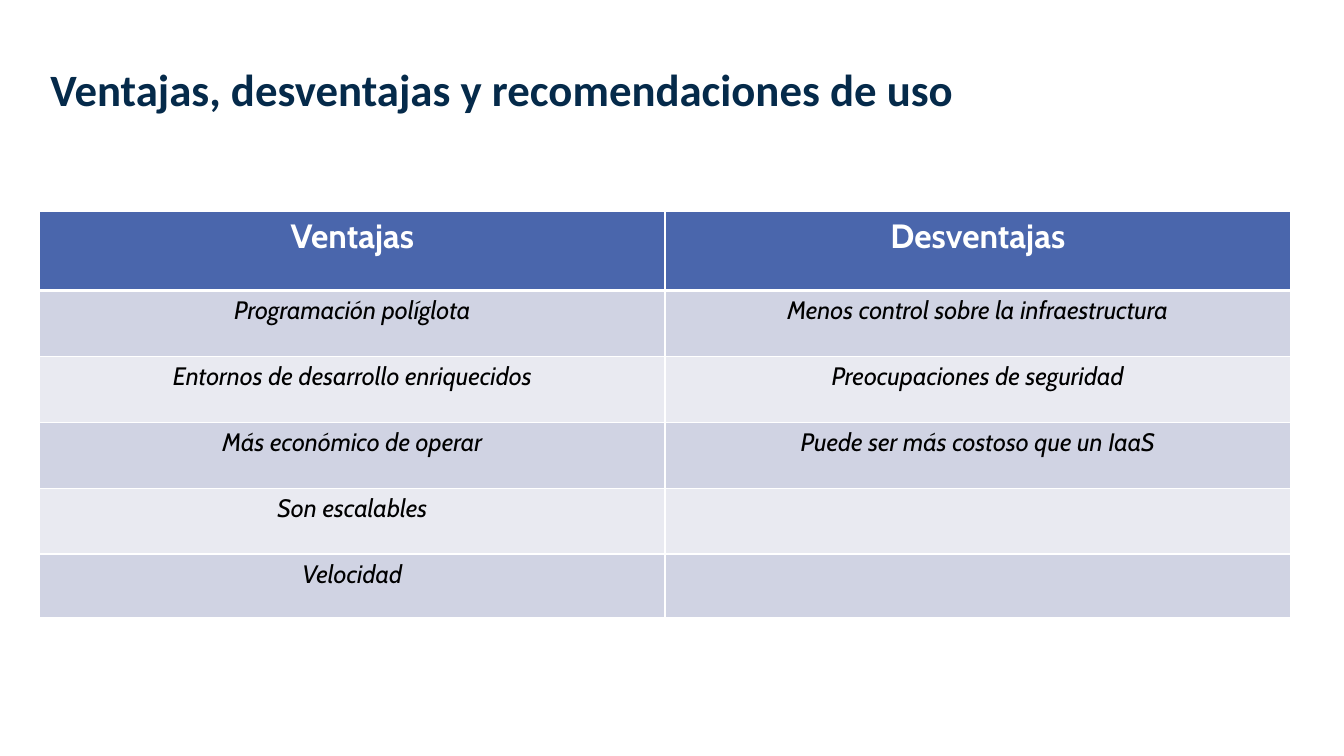
from dataclasses import dataclass

from lxml import etree
from pptx import Presentation
from pptx import util as u
from pptx.dml import color
from pptx.enum import text
from pptx.oxml import ns


@dataclass(frozen=True)
class Theme:
    title_font: str = "Calibri"
    body_font: str = "Cabin"
    title_size: int = 32
    header_size: int = 24
    body_size: int = 18
    navy: str = "052A4A"
    header_fill: str = "4A66AC"
    bands: tuple = ("D0D3E3", "E9EAF1")
    white: str = "FFFFFF"
    black: str = "000000"
    thin: int = 1
    thick: int = 3


THEME = Theme()
TITLE = "Ventajas, desventajas y recomendaciones de uso"
ROWS = [
    ("Ventajas", "Desventajas"),
    ("Programación políglota", "Menos control sobre la infraestructura"),
    ("Entornos de desarrollo enriquecidos", "Preocupaciones de seguridad"),
    ("Más económico de operar", "Puede ser más costoso que un IaaS"),
    ("Son escalables", ""),
    ("Velocidad", ""),
]
ROW_HEIGHTS = [2.0, 1.66, 1.66, 1.66, 1.66, 1.6]


def add_run(p, content, font, size, rgb, bold=False, italic=False):
    r = p.add_run()
    r.text = content
    r.font.name = font
    r.font.size = u.Pt(size)
    r.font.bold = bold
    r.font.italic = italic
    r.font.color.rgb = color.RGBColor.from_string(rgb)


def set_border(cell, side, width):
    tc_pr = cell._tc.get_or_add_tcPr()
    ln = etree.SubElement(tc_pr, ns.qn(f"a:ln{side}"), w=str(u.Pt(width)))
    fill = etree.SubElement(ln, ns.qn("a:solidFill"))
    etree.SubElement(fill, ns.qn("a:srgbClr"), val=THEME.white)


def add_title(s, left, top, width, height):
    sp = s.shapes.add_textbox(u.Cm(left), u.Cm(top), u.Cm(width), u.Cm(height))
    tf = sp.text_frame
    tf.word_wrap = True
    tf.vertical_anchor = text.MSO_ANCHOR.MIDDLE
    p = tf.paragraphs[0]
    p.line_spacing = 0.9
    add_run(p, TITLE, THEME.title_font, THEME.title_size, THEME.navy, bold=True)


def fill_cell(cell, content, row):
    header = row == 0
    set_border(cell, "L", THEME.thin)
    set_border(cell, "R", THEME.thin)
    set_border(cell, "T", THEME.thick if row == 1 else THEME.thin)
    set_border(cell, "B", THEME.thick if header else THEME.thin)
    cell.fill.solid()
    rgb = THEME.header_fill if header else THEME.bands[(row - 1) % 2]
    cell.fill.fore_color.rgb = color.RGBColor.from_string(rgb)
    p = cell.text_frame.paragraphs[0]
    p.alignment = text.PP_ALIGN.CENTER
    if content:
        add_run(
            p,
            content,
            THEME.body_font,
            THEME.header_size if header else THEME.body_size,
            THEME.white if header else THEME.black,
            bold=header,
            italic=not header,
        )


def add_comparison(s, left, top, width, height):
    columns = len(ROWS[0])
    table = s.shapes.add_table(
        len(ROWS), columns, u.Cm(left), u.Cm(top), u.Cm(width), u.Cm(height)
    ).table
    table.horz_banding = False
    for column in table.columns:
        column.width = u.Cm(width / columns)
    for i, (contents, row_height) in enumerate(zip(ROWS, ROW_HEIGHTS)):
        table.rows[i].height = u.Cm(row_height)
        for j, content in enumerate(contents):
            fill_cell(table.cell(i, j), content, i)


def main():
    prs = Presentation()
    prs.slide_width, prs.slide_height = u.Cm(33.87), u.Cm(19.05)
    s = prs.slides.add_slide(prs.slide_layouts[6])
    add_title(s, 1.02, 1.02, 31.93, 2.59)
    add_comparison(s, 1.0, 5.32, 31.52, sum(ROW_HEIGHTS))
    prs.save("out.pptx")


if __name__ == "__main__":
    main()
